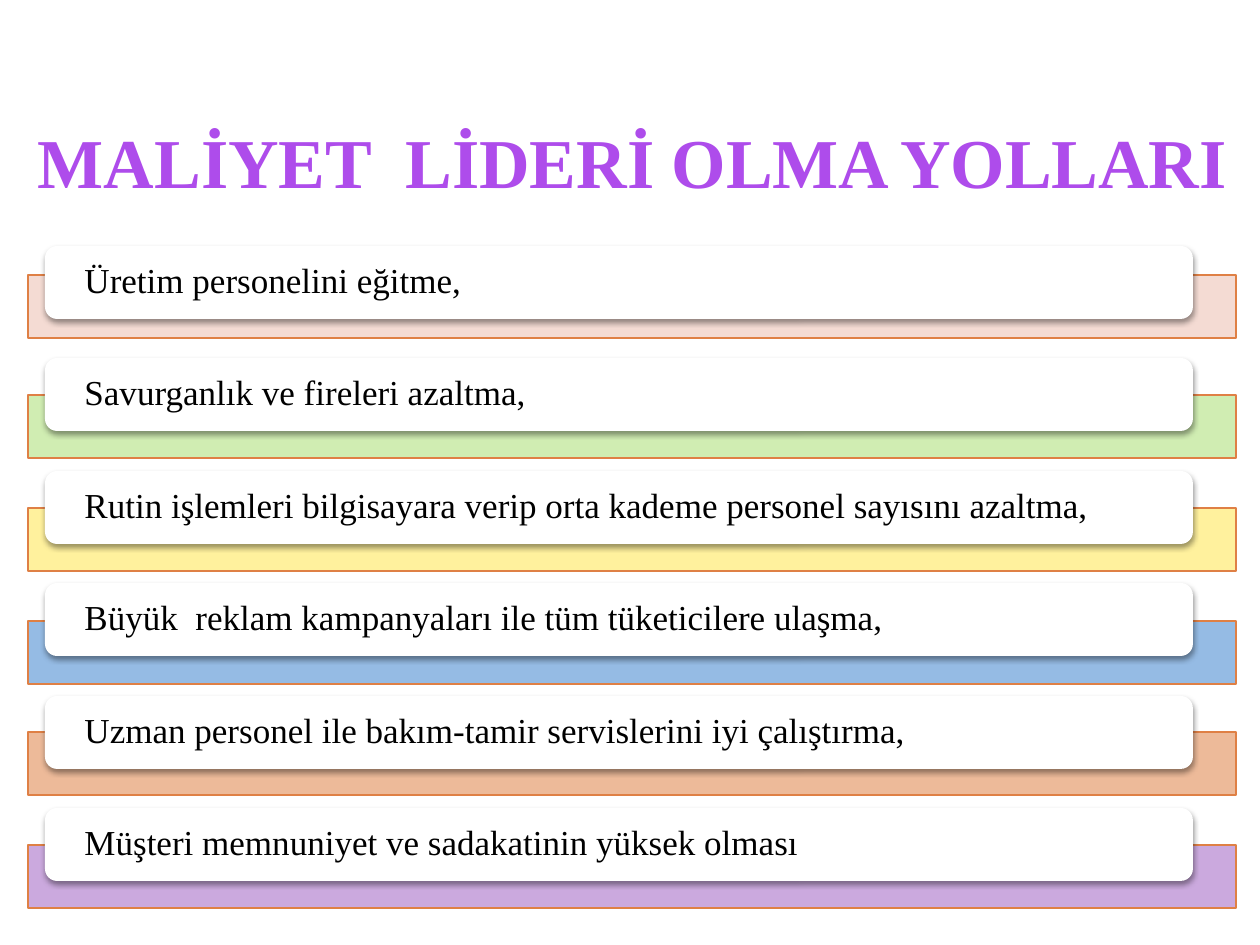
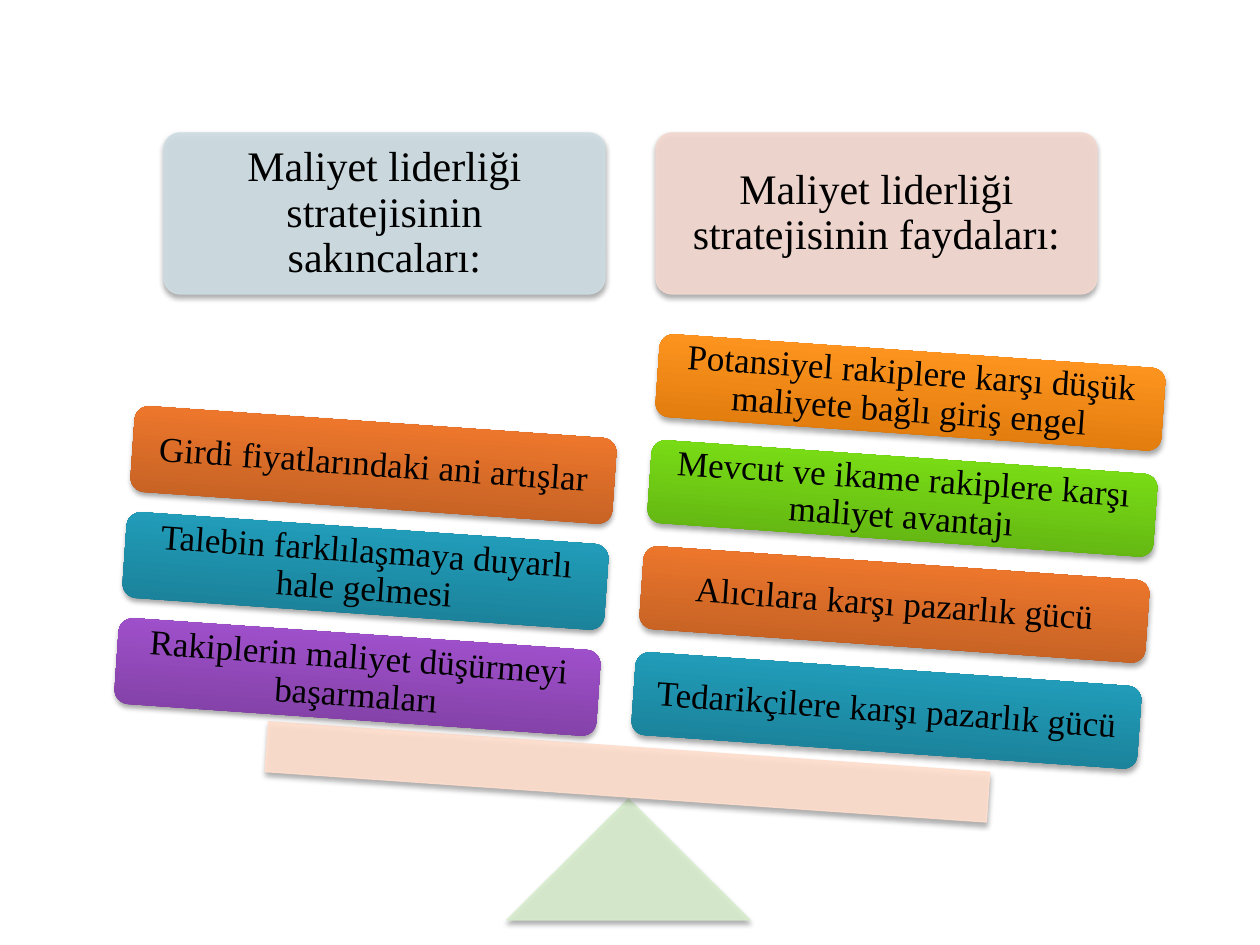
from copy import deepcopy

from lxml import etree
from pptx import Presentation
from pptx.dml.color import RGBColor
from pptx.enum.shapes import MSO_SHAPE
from pptx.enum.text import MSO_ANCHOR, PP_ALIGN
from pptx.oxml.ns import qn
from pptx.util import Emu, Pt

RECT = MSO_SHAPE.RECTANGLE
ROUNDED = MSO_SHAPE.ROUNDED_RECTANGLE
TRIANGLE = MSO_SHAPE.ISOSCELES_TRIANGLE
MIDDLE = MSO_ANCHOR.MIDDLE
LEFT, CENTER = PP_ALIGN.LEFT, PP_ALIGN.CENTER

PX_PER_INCH = 126
FONT = "Times New Roman"
BLACK, WHITE = "000000", "FFFFFF"
TITLE_PURPLE = "AE4CEB"
BAR_LINE = "DF8045"
CARD_SHADOW = (38, 1.6)
BALANCE_SHADOW = (35, 1.8)
TILT = 4

ORANGE = ("B85B22", "EE772C", "F37629")
TEAL = ("19798F", "219DBA", "1EA0BE")
PURPLE = ("7B3D9C", "9F50CB", "A14ECF")
GREEN = ("5DAA11", "79DD16", "7AE212")
AMBER = ("D67307", "FF9520", "FF9521")

WAYS = [
    (275, "F3D8CF", "Üretim personelini eğitme,"),
    (395, "CBECAA", "Savurganlık ve fireleri azaltma,"),
    (508, "FFF093", "Rutin işlemleri bilgisayara verip orta kademe personel sayısını azaltma,"),
    (621, "8AB4E2", "Büyük  reklam kampanyaları ile tüm tüketicilere ulaşma,"),
    (732, "ECB38F", "Uzman personel ile bakım-tamir servislerini iyi çalıştırma,"),
    (845, "C6A0DB", "Müşteri memnuniyet ve sadakatinin yüksek olması"),
]
DRAWBACKS = [
    (PURPLE, "Rakiplerin maliyet düşürmeyi başarmaları"),
    (TEAL, "Talebin farklılaşmaya duyarlı hale gelmesi"),
    (ORANGE, "Girdi fiyatlarındaki ani artışlar"),
]
BENEFITS = [
    (TEAL, "Tedarikçilere karşı pazarlık gücü"),
    (ORANGE, "Alıcılara karşı pazarlık gücü"),
    (GREEN, "Mevcut ve ikame rakiplere karşı maliyet avantajı"),
    (AMBER, "Potansiyel rakiplere karşı düşük maliyete bağlı giriş engel"),
]


def px(length):
    return Emu(round(length * 914400 / PX_PER_INCH))


def color(hex_code):
    return RGBColor.from_string(hex_code)


def write(frame, text, size, align=LEFT, inset=13, ink=BLACK, bold=False):
    frame.word_wrap = True
    frame.vertical_anchor = MIDDLE
    frame.margin_left = frame.margin_right = px(inset)
    frame.margin_top = frame.margin_bottom = 0
    paragraph = frame.paragraphs[0]
    paragraph.alignment = align
    paragraph.line_spacing = 0.9
    run = paragraph.add_run()
    run.text = text
    run.font.name = FONT
    run.font.size = Pt(size)
    run.font.bold = bold
    run.font.color.rgb = color(ink)


def add_block(slide, kind, box, fill=None, line=None):
    block = slide.shapes.add_shape(kind, *map(px, box))
    block.shadow.inherit = False
    if fill:
        block.fill.solid()
        block.fill.fore_color.rgb = color(fill)
    if line:
        block.line.color.rgb = color(line)
        block.line.width = Pt(0.75)
    else:
        block.line.fill.background()
    return block


def soften(paint):
    for tone in paint.iter(qn("a:srgbClr")):
        etree.SubElement(tone, qn("a:alpha"), val="90000")


def cast_shadow(block, opacity, distance):
    effects = block._element.spPr.find(qn("a:effectLst"))
    shadow = etree.SubElement(
        effects, qn("a:outerShdw"), blurRad=str(Pt(3.1)), dist=str(Pt(distance)),
        dir="5400000", algn="ctr", rotWithShape="0")
    tone = etree.SubElement(shadow, qn("a:srgbClr"), val=BLACK)
    etree.SubElement(tone, qn("a:alpha"), val=str(opacity * 1000))


def shade(block, tones):
    block.fill.gradient()
    block.fill.gradient_angle = 90
    stops = block._element.spPr.find(".//" + qn("a:gsLst"))
    stops.append(deepcopy(stops[-1]))
    for stop, tone, position in zip(block.fill.gradient_stops, tones, (0, 0.8, 1)):
        stop.color.rgb = color(tone)
        stop.position = position


def add_title(slide, text):
    title = slide.shapes.add_textbox(*map(px, (25, 125, 1235, 81)))
    write(title.text_frame, text, 40, ink=TITLE_PURPLE, bold=True)


def add_way(slide, bar_top, card_top, tone, text):
    bar = add_block(slide, RECT, (28, bar_top, 1208, 63), tone, BAR_LINE)
    soften(bar._element.spPr.find(qn("a:solidFill")))
    card = add_block(slide, ROUNDED, (45, card_top, 1148, 73), WHITE)
    cast_shadow(card, *CARD_SHADOW)
    write(card.text_frame, text, 20, inset=36)


def add_pale_block(slide, kind, box, tone):
    block = add_block(slide, kind, box, tone, tone)
    soften(block._element.spPr)
    cast_shadow(block, *BALANCE_SHADOW)
    return block


def add_heading(slide, left, tone, text):
    heading = add_pale_block(slide, ROUNDED, (left, 133, 441, 161), tone)
    heading.adjustments[0] = 0.1
    write(heading.text_frame, text, 24, CENTER, inset=18)


def add_stack(slide, left, bottom_top, width, height, weights):
    for level, (tones, text) in enumerate(weights):
        box = (left + 8 * level, bottom_top - 106 * level, width, height)
        weight = add_block(slide, ROUNDED, box)
        shade(weight, tones)
        cast_shadow(weight, *BALANCE_SHADOW)
        weight.rotation = TILT
        write(weight.text_frame, text, 20, CENTER, inset=14)


def build_ways(slide):
    add_title(slide, "MALİYET  LİDERİ OLMA YOLLARI")
    for row, (bar_top, tone, text) in enumerate(WAYS):
        add_way(slide, bar_top, 246 + row * 225 // 2, tone, text)


def build_balance(slide):
    add_heading(slide, 164, "CEDDE3", "Maliyet liderliği stratejisinin sakıncaları:")
    add_heading(slide, 656, "F3D8CF", "Maliyet liderliği stratejisinin faydaları:")
    add_pale_block(slide, TRIANGLE, (507, 799, 243, 121), "D7ECCD")
    beam = add_pale_block(slide, RECT, (266, 747, 723, 50), "FFDECD")
    beam.rotation = TILT
    add_stack(slide, 633, 669, 507, 83, BENEFITS)
    add_stack(slide, 116, 634, 483, 86, DRAWBACKS)


def main():
    deck = Presentation()
    deck.slide_width, deck.slide_height = px(1260), px(945)
    blank = deck.slide_layouts[6]
    for build in (build_ways, build_balance):
        build(deck.slides.add_slide(blank))
    deck.save("out.pptx")


if __name__ == "__main__":
    main()
